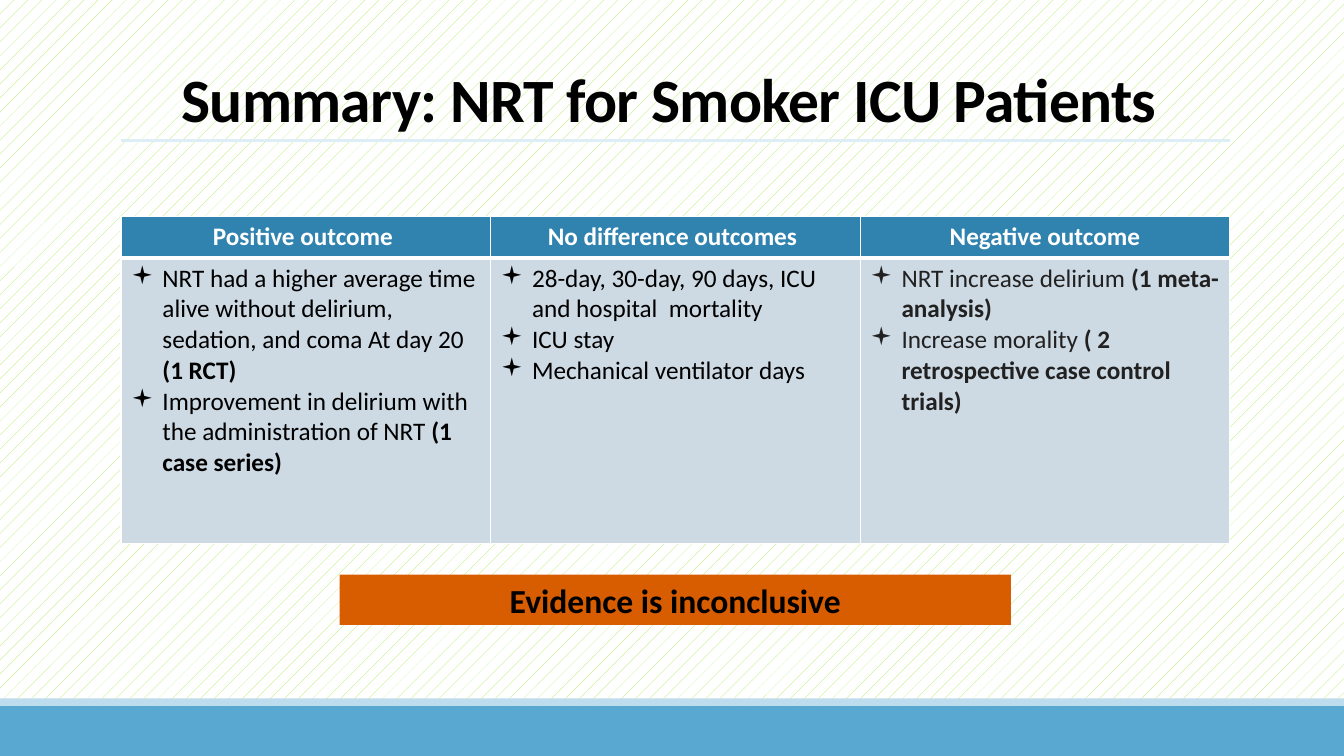
from lxml.etree import SubElement
from pptx import Presentation
from pptx.dml.color import RGBColor
from pptx.enum.dml import MSO_PATTERN
from pptx.enum.shapes import MSO_CONNECTOR, MSO_SHAPE
from pptx.enum.text import MSO_ANCHOR, MSO_AUTO_SIZE, PP_ALIGN
from pptx.oxml.ns import qn
from pptx.util import Cm, Pt

BLACK = RGBColor(0x00, 0x00, 0x00)
CHARCOAL = RGBColor(0x21, 0x21, 0x21)
WHITE = RGBColor(0xFF, 0xFF, 0xFF)
LIME = RGBColor(0xA7, 0xEA, 0x52)
SKY = RGBColor(0x59, 0xA8, 0xD1)
PALE_SKY = RGBColor(0xBD, 0xDC, 0xED)
RULE_BLUE = RGBColor(0xDE, 0xEE, 0xF6)
HEADER_BLUE = RGBColor(0x30, 0x83, 0xAF)
CELL_GREY = RGBColor(0xCD, 0xD9, 0xE3)
ORANGE = RGBColor(0xD8, 0x5C, 0x00)

SLIDE_WIDTH, SLIDE_HEIGHT = 33.87, 19.05
LEFT, CONTENT_WIDTH = 3.05, 27.94
BULLET_INDENT = 0.79

# Each column: header, text colour, bullets as (plain text, bold text)
OUTCOMES = [
    ("Positive outcome ", BLACK, [
        ("NRT had a higher average time alive without delirium, sedation, and coma At day 20 ", "(1 RCT)"),
        ("Improvement in delirium with the administration of NRT ", "(1 case series)"),
    ]),
    ("No difference outcomes ", BLACK, [
        ("28-day, 30-day, 90 days, ICU and hospital  mortality", ""),
        ("ICU stay", ""),
        ("Mechanical ventilator days", ""),
    ]),
    ("Negative outcome", CHARCOAL, [
        ("NRT increase delirium ", "(1 meta- analysis)"),
        ("Increase morality ", "( 2 retrospective case control trials)"),
    ]),
]


def add_text(para, text, size=18, color=BLACK, bold=False, font="Calibri", align=None):
    span = para.add_run()
    span.text = text
    span.font.name = font
    span.font.size = Pt(size)
    span.font.bold = bold
    span.font.color.rgb = color
    if align is not None:
        para.alignment = align
    return span


def add_bullet(para):
    properties = para._p.get_or_add_pPr()
    properties.set("marL", str(Cm(BULLET_INDENT)))
    properties.set("indent", str(-Cm(BULLET_INDENT)))
    SubElement(properties, qn("a:buFont"), typeface="Wingdings")
    SubElement(properties, qn("a:buChar"), char="▪")


def style_cell(cell, fill, bottom_width=1):
    """Give the cell white borders and a solid fill."""
    properties = cell._tc.get_or_add_tcPr()
    for side, width in (("L", 1), ("R", 1), ("T", 1), ("B", bottom_width)):
        border = SubElement(properties, qn(f"a:ln{side}"), w=str(Pt(width)))
        solid = SubElement(border, qn("a:solidFill"))
        SubElement(solid, qn("a:srgbClr"), val=str(WHITE))
    cell.fill.solid()
    cell.fill.fore_color.rgb = fill


class SummarySlide:
    """Holds the current slide and draws elements in its style."""

    def __init__(self, deck):
        self.page = deck.slides.add_slide(deck.slide_layouts[5])

    def background(self):
        fill = self.page.background.fill
        fill.patterned()
        fill.pattern = MSO_PATTERN.PERCENT_5
        fill.fore_color.rgb = LIME
        fill.back_color.rgb = WHITE

    def bar(self, left, top, width, height, color):
        box = self.page.shapes.add_shape(
            MSO_SHAPE.RECTANGLE, Cm(left), Cm(top), Cm(width), Cm(height))
        box.shadow.inherit = False
        box.fill.solid()
        box.fill.fore_color.rgb = color
        box.line.fill.background()
        return box

    def rule(self, top):
        line = self.page.shapes.add_connector(
            MSO_CONNECTOR.STRAIGHT, Cm(LEFT), Cm(top), Cm(LEFT + CONTENT_WIDTH), Cm(top))
        line.line.color.rgb = RULE_BLUE
        line.line.width = Pt(2.25)
        SubElement(line._element.spPr, qn("a:effectLst"))

    def title(self, text):
        box = self.page.shapes.title
        box.left, box.top, box.width, box.height = Cm(LEFT), Cm(0.79), Cm(CONTENT_WIDTH), Cm(2.74)
        frame = box.text_frame
        frame.auto_size = MSO_AUTO_SIZE.NONE
        frame.vertical_anchor = MSO_ANCHOR.BOTTOM
        para = frame.paragraphs[0]
        para.line_spacing = 0.85
        span = add_text(para, text, size=44, bold=True, align=PP_ALIGN.CENTER)
        span.font._element.set("spc", "-50")

    def outcome_table(self, top, row_heights):
        table = self.page.shapes.add_table(
            len(row_heights), len(OUTCOMES), Cm(LEFT), Cm(top),
            Cm(CONTENT_WIDTH), Cm(sum(row_heights))).table
        for row, height in zip(table.rows, row_heights):
            row.height = Cm(height)
        for index, (heading, color, bullets) in enumerate(OUTCOMES):
            header, body = table.cell(0, index), table.cell(1, index)
            style_cell(header, HEADER_BLUE, bottom_width=3)
            style_cell(body, CELL_GREY)
            add_text(header.text_frame.paragraphs[0], heading, color=WHITE,
                     bold=True, align=PP_ALIGN.CENTER)
            frame = body.text_frame
            for number, (plain, strong) in enumerate(bullets):
                para = frame.add_paragraph() if number else frame.paragraphs[0]
                add_bullet(para)
                add_text(para, plain, color=color)
                if strong:
                    add_text(para, strong, color=color, bold=True)

    def conclusion(self, text):
        box = self.bar(8.56, 14.48, 16.92, 1.27, ORANGE)
        box.text_frame.word_wrap = True
        add_text(box.text_frame.paragraphs[0], text, size=24, bold=True, align=PP_ALIGN.CENTER)


def main():
    deck = Presentation()
    deck.slide_width, deck.slide_height = Cm(SLIDE_WIDTH), Cm(SLIDE_HEIGHT)
    summary = SummarySlide(deck)
    summary.background()
    summary.bar(0, 17.78, SLIDE_WIDTH, 1.27, SKY)
    summary.bar(0, 17.6, SLIDE_WIDTH, 0.18, PALE_SKY)
    summary.rule(3.53)
    summary.title("Summary: NRT for Smoker ICU Patients ")
    summary.outcome_table(5.46, [1.04, 7.2])
    summary.conclusion("Evidence is inconclusive")
    deck.save("out.pptx")


if __name__ == "__main__":
    main()
